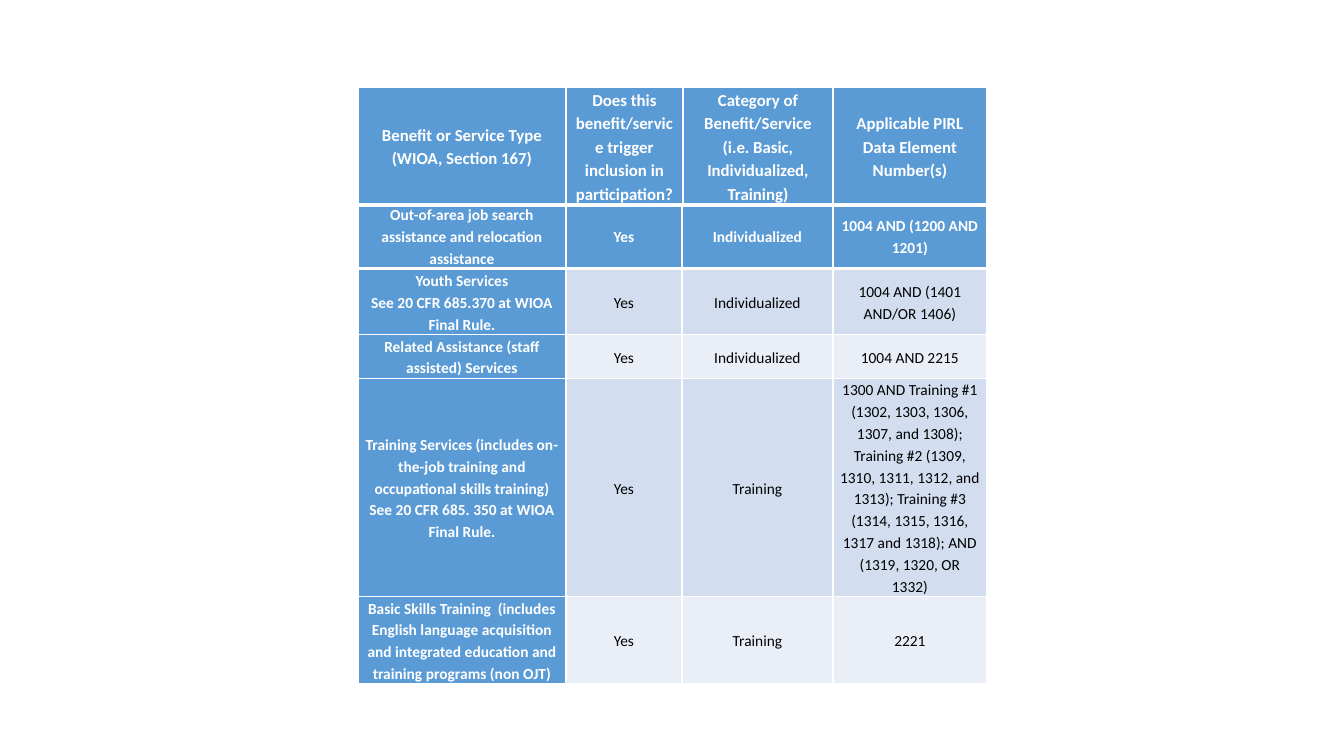
from lxml import etree
from pptx import Presentation
from pptx.dml.color import RGBColor
from pptx.enum.text import MSO_ANCHOR, PP_ALIGN
from pptx.oxml.ns import qn
from pptx.util import Pt

SCALE = 914400 / 100.8
COLORS = {
    "blue": "5B9BD5",
    "band": "D2DEEF",
    "light": "EAEFF7",
    "white": "FFFFFF",
    "black": "000000",
}
TABLE_LEFT = 358


def px(value):
    return round(value * SCALE)


def add_service_table(slide, top, column_widths, row_heights, rows, font_size):
    shape = slide.shapes.add_table(
        len(rows), len(column_widths), px(TABLE_LEFT), px(top),
        px(sum(column_widths)), px(sum(row_heights)))
    table = shape.table
    for column, width in zip(table.columns, column_widths):
        column.width = px(width)
    for row, height in zip(table.rows, row_heights):
        row.height = px(height)

    for row_index, texts in enumerate(rows):
        for column_index, text in enumerate(texts):
            cell = table.cell(row_index, column_index)
            cell.text_frame.text = text
            cell.vertical_anchor = MSO_ANCHOR.MIDDLE
            cell.margin_left = cell.margin_right = px(7)
            cell.margin_top = cell.margin_bottom = 0

            border_widths = {
                "lnL": 1,
                "lnR": 1,
                "lnT": 3 if row_index == 1 else 1,
                "lnB": 3 if row_index == 0 else 1,
            }
            properties = cell._tc.get_or_add_tcPr()
            for tag, width in border_widths.items():
                line = etree.SubElement(properties, qn(f"a:{tag}"), w=str(Pt(width)))
                line_fill = etree.SubElement(line, qn("a:solidFill"))
                etree.SubElement(line_fill, qn("a:srgbClr"), val=COLORS["white"])

            is_heading = row_index == 0 or column_index == 0
            band = "band" if row_index % 2 else "light"
            cell.fill.solid()
            cell.fill.fore_color.rgb = RGBColor.from_string(
                COLORS["blue" if is_heading else band])

            for paragraph in cell.text_frame.paragraphs:
                paragraph.alignment = PP_ALIGN.CENTER
                paragraph.line_spacing = 1.15
                for run in paragraph.runs:
                    run.font.name = "Calibri"
                    run.font.size = Pt(font_size)
                    run.font.bold = is_heading
                    run.font.color.rgb = RGBColor.from_string(
                        COLORS["white" if is_heading else "black"])


presentation = Presentation()
presentation.slide_width = px(1344)
presentation.slide_height = px(756)
slide = presentation.slides.add_slide(presentation.slide_layouts[6])

services = [
    ("Out-of-area job search assistance and relocation assistance",
     "Yes", "Individualized", "1004 AND (1200 AND 1201)"),
    ("Youth Services\nSee 20 CFR 685.370 at WIOA Final Rule.",
     "Yes", "Individualized", "1004 AND (1401 AND/OR 1406)"),
    ("Related Assistance (staff assisted) Services",
     "Yes", "Individualized", "1004 AND 2215"),
    ("Training Services (includes on-the-job training and occupational skills "
     "training)\nSee 20 CFR 685. 350 at WIOA Final Rule.",
     "Yes", "Training",
     "1300 AND Training #1 (1302, 1303, 1306, 1307, and 1308); "
     "Training #2 (1309, 1310, 1311, 1312, and 1313); "
     "Training #3 (1314, 1315, 1316, 1317 and 1318); AND (1319, 1320, OR 1332)"),
    ("Basic Skills Training  (includes English language acquisition and "
     "integrated education and training programs (non OJT)",
     "Yes", "Training", "2221"),
]
headings = [
    ("Benefit or Service Type\n(WIOA, Section 167)",
     "Does this benefit/service trigger inclusion in participation?",
     "Category of Benefit/Service (i.e. Basic, Individualized, Training)",
     "Applicable PIRL Data Element Number(s)"),
]

add_service_table(slide, 203, [208, 116, 151, 154], [55, 66, 43, 218, 87], services, 11)
add_service_table(slide, 87, [208, 117, 150, 154], [115], headings, 12)

presentation.save("out.pptx")
